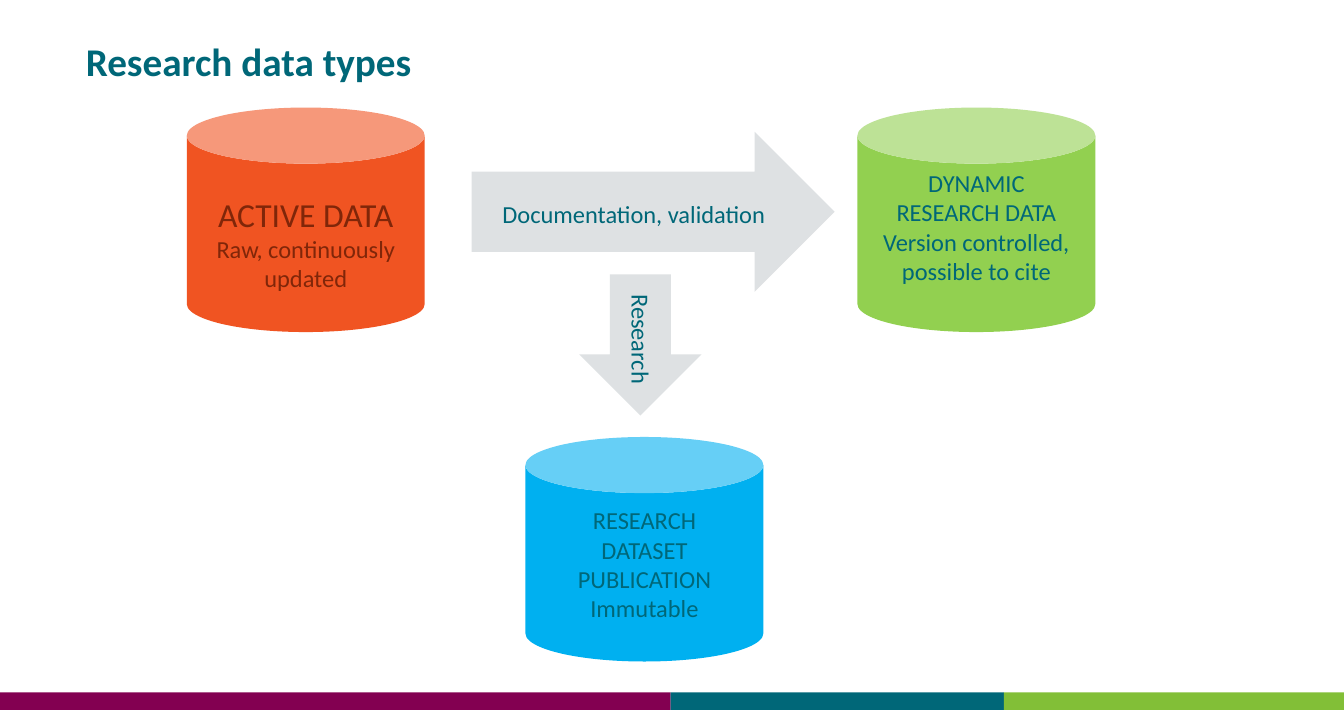
from pptx import Presentation
from pptx.dml.color import RGBColor
from pptx.enum.shapes import MSO_SHAPE as Shape
from pptx.enum.text import PP_ALIGN as Align
from pptx.util import Inches, Pt

COLORS = {
    "teal": "006778", "plum": "830051", "leaf": "82BF37", "orange": "F05422",
    "rust": "802609", "green": "92D050", "blue": "00B0F0", "gray": "DEE1E3",
}
BODY = {"name": "Calibri", "size": Pt(13.1), "bold": False}
LEAD = {**BODY, "size": Pt(18)}
TITLE = {**BODY, "size": Pt(21), "bold": True}


class Deck:
    """Holds the style and the current slide, and draws each kind of element."""

    def __init__(self, width, height):
        self.prs = Presentation()
        self.prs.slide_width = Inches(width)
        self.prs.slide_height = Inches(height)
        self.s = self.prs.slides.add_slide(self.prs.slide_layouts[6])

    def shape(self, kind, box, color):
        sp = self.s.shapes.add_shape(kind, *map(Inches, box))
        sp.shadow.inherit = False
        sp.fill.solid()
        sp.fill.fore_color.rgb = RGBColor.from_string(COLORS[color])
        sp.line.fill.background()

    def text(self, box, lines, color="teal", align=Align.LEFT, wrap=True, rotation=0):
        sp = self.s.shapes.add_textbox(*map(Inches, box))
        sp.rotation = rotation
        tf = sp.text_frame
        tf.word_wrap = wrap
        for i, (words, style) in enumerate(lines):
            p = tf.add_paragraph() if i else tf.paragraphs[0]
            p.alignment = align
            r = p.add_run()
            r.text = words
            for key, value in style.items():
                setattr(r.font, key, value)
            r.font.color.rgb = RGBColor.from_string(COLORS[color])

    def store(self, left, top, fill, text_top, text_height, lines, color="teal"):
        self.shape(Shape.CAN, (left, top, 1.77, 1.67), fill)
        self.text((left + 0.065, text_top, 1.64, text_height), lines, color, Align.CENTER)


def main():
    deck = Deck(10, 5.28)
    edges = [0, 4.99, 7.47, 10]
    for left, right, color in zip(edges, edges[1:], ["plum", "teal", "leaf"]):
        deck.shape(Shape.RECTANGLE, (left, 5.15, right - left, 0.13), color)

    deck.store(1.39, 0.8, "orange", 1.39, 0.85,
               [("ACTIVE DATA", LEAD), ("Raw, continuously updated", BODY)], "rust")
    deck.store(6.38, 0.8, "green", 1.2, 1.21,
               [("DYNAMIC RESEARCH DATA", BODY),
                ("Version controlled, possible to cite", BODY)])
    deck.store(3.91, 3.25, "blue", 3.71, 0.99,
               [("RESEARCH DATASET PUBLICATION", BODY), ("Immutable", BODY)])

    deck.shape(Shape.RIGHT_ARROW, (3.51, 0.98, 2.7, 1.19), "gray")
    deck.text((3.64, 1.43, 2.44, 0.32), [("Documentation, validation", BODY)])
    deck.shape(Shape.DOWN_ARROW, (4.31, 2.04, 0.91, 1.05), "gray")
    deck.text((4.31, 2.39, 0.92, 0.32), [("Research", BODY)], wrap=False, rotation=90)

    deck.text((0.54, 0.23, 8.47, 0.88), [("Research data types", TITLE)])
    deck.prs.save("out.pptx")


if __name__ == "__main__":
    main()
